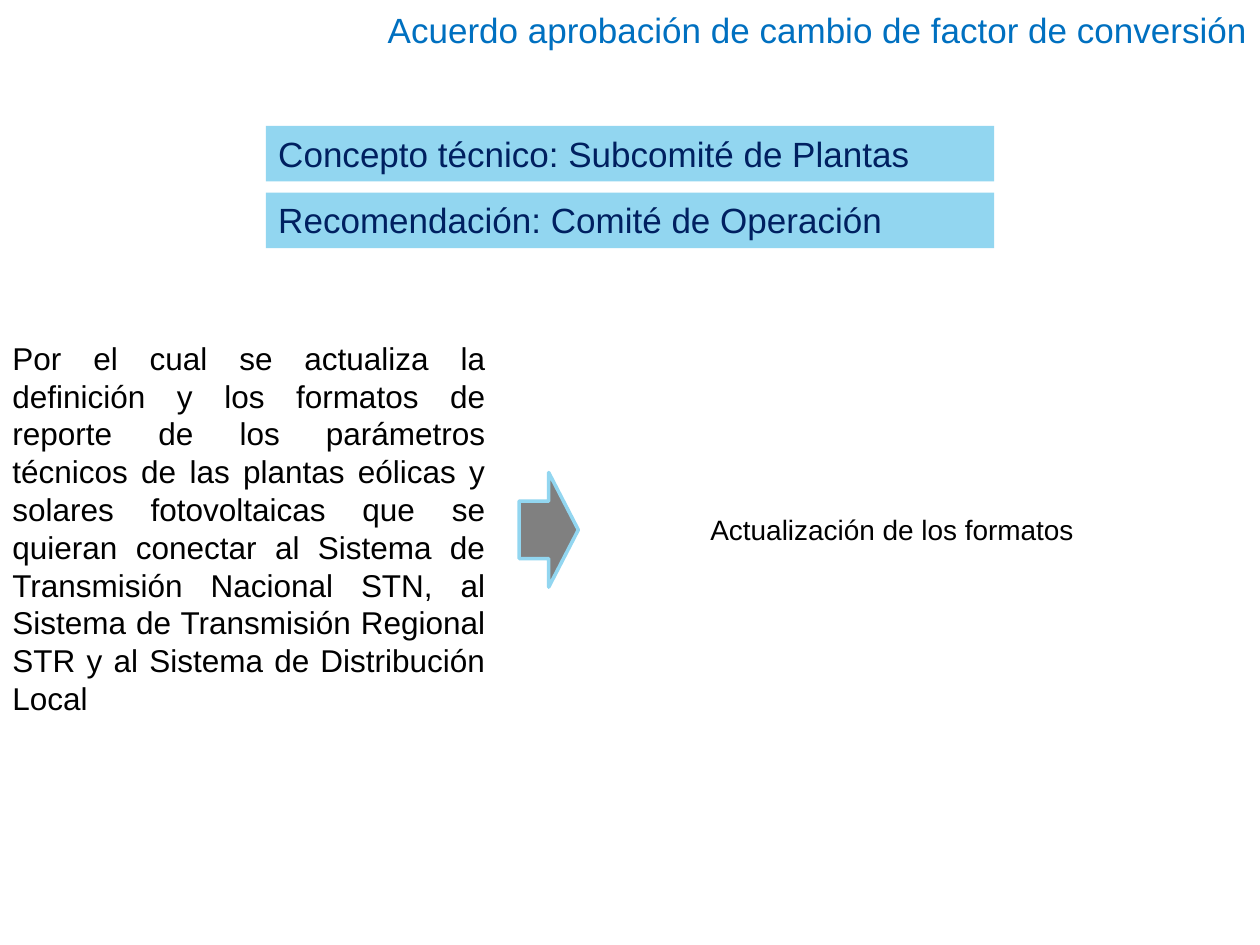
"""Build the slide on the agreement to update the reporting formats."""
from dataclasses import dataclass

from pptx import Presentation
from pptx.dml.color import RGBColor
from pptx.enum.shapes import MSO_SHAPE
from pptx.enum.text import MSO_ANCHOR, PP_ALIGN
from pptx.util import Inches, Pt

RECTANGLE, DOWN_ARROW = MSO_SHAPE.RECTANGLE, MSO_SHAPE.DOWN_ARROW
TOP = MSO_ANCHOR.TOP
RIGHT, CENTER, JUSTIFY = PP_ALIGN.RIGHT, PP_ALIGN.CENTER, PP_ALIGN.JUSTIFY
FONT = "Arial"
COLORS = {
    "title": "0070C0",
    "banner": "92D6F0",
    "navy": "002060",
    "black": "000000",
    "arrow": "808080",
}


@dataclass(frozen=True)
class Area:
    left: float
    top: float
    width: float
    height: float

    def lengths(self) -> tuple:
        return tuple(Inches(n) for n in (self.left, self.top, self.width, self.height))


@dataclass(frozen=True)
class Passage:
    text: str
    area: Area
    size: int
    align: PP_ALIGN


BANNERS = ("Concepto técnico: Subcomité de Plantas", "Recomendación: Comité de Operación")
BANNER_AREA = Area(2.11, 1, 5.78, 0.44)
BANNER_PITCH = 0.53
PASSAGES = (
    Passage(
        "Por el cual se actualiza la definición y los formatos de reporte de los "
        "parámetros técnicos de las plantas eólicas y solares fotovoltaicas que se "
        "quieran conectar al Sistema de Transmisión Nacional STN, al Sistema de "
        "Transmisión Regional STR y al Sistema de Distribución Local",
        Area(0, 2.64, 3.95, 3.13), 18, JUSTIFY,
    ),
    Passage("Actualización de los formatos", Area(4.75, 4.02, 4.66, 0.37), 16, CENTER),
)


def color(name: str) -> RGBColor:
    return RGBColor.from_string(COLORS[name])


def write(shape, text: str, *, size: int, ink: str, align: PP_ALIGN) -> None:
    frame = shape.text_frame
    frame.word_wrap = True
    frame.vertical_anchor = TOP
    para = frame.paragraphs[0]
    para.alignment = align
    span = para.add_run()
    span.text = text
    span.font.name = FONT
    span.font.size = Pt(size)
    span.font.color.rgb = color(ink)


def add_filled(page, kind: MSO_SHAPE, area: Area, fill: str):
    shape = page.shapes.add_shape(kind, *area.lengths())
    shape.shadow.inherit = False
    shape.fill.solid()
    shape.fill.fore_color.rgb = color(fill)
    shape.line.fill.background()
    return shape


def add_title(page, text: str, area: Area) -> None:
    title = page.shapes.title
    title.left, title.top, title.width, title.height = area.lengths()
    write(title, text, size=20, ink="title", align=RIGHT)


def add_banners(page) -> None:
    first = BANNER_AREA
    for index, text in enumerate(BANNERS):
        area = Area(first.left, first.top + index * BANNER_PITCH, first.width, first.height)
        banner = add_filled(page, RECTANGLE, area, "banner")
        write(banner, text, size=20, ink="navy", align=JUSTIFY)


def add_passage(page, passage: Passage) -> None:
    box = page.shapes.add_textbox(*passage.area.lengths())
    write(box, passage.text, size=passage.size, ink="black", align=passage.align)


def add_arrow(page, area: Area) -> None:
    arrow = add_filled(page, DOWN_ARROW, area, "arrow")
    arrow.rotation = 270
    arrow.line.color.rgb = color("banner")
    arrow.line.width = Pt(2)


def main() -> None:
    deck = Presentation()
    deck.slide_width, deck.slide_height = Inches(10), Inches(7.5)
    page = deck.slides.add_slide(deck.slide_layouts[5])
    add_title(
        page,
        "Acuerdo aprobación de cambio de factor de conversión",
        Area(1.47, 0.02, 8.53, 0.43),
    )
    add_banners(page)
    for passage in PASSAGES:
        add_passage(page, passage)
    add_arrow(page, Area(3.9, 3.97, 0.91, 0.47))
    deck.save("out.pptx")


if __name__ == "__main__":
    main()
